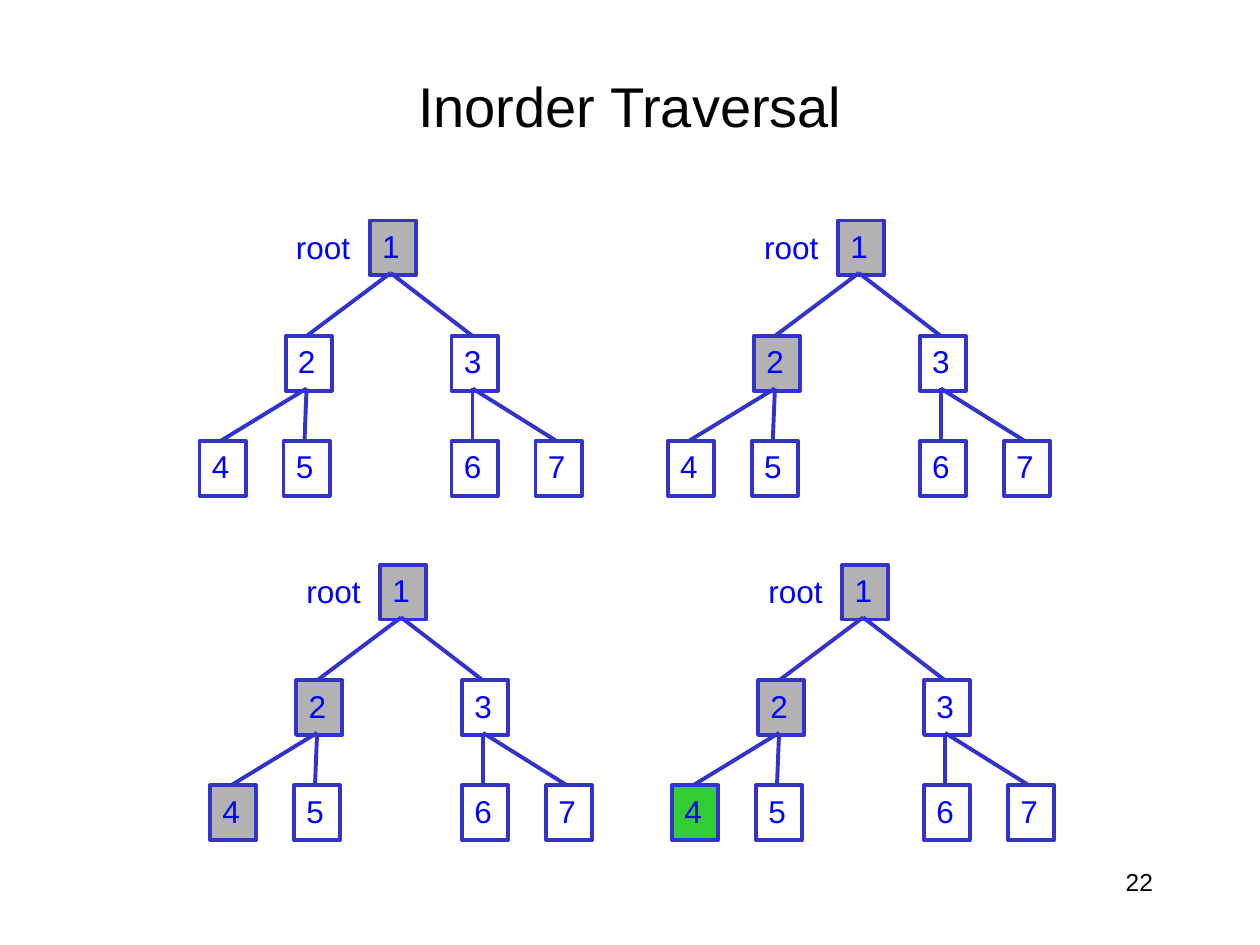
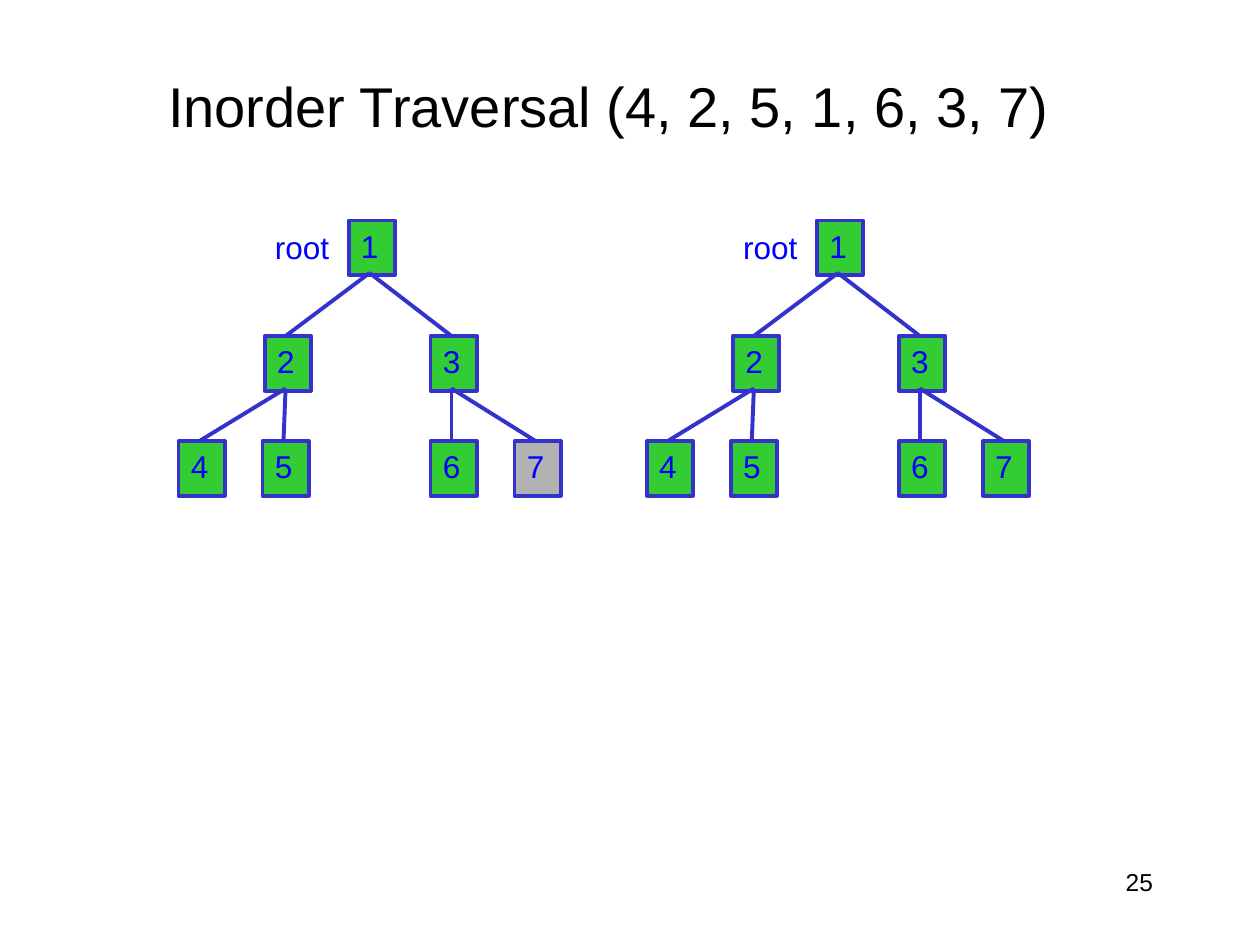
import pptx
import pptx.util
import pptx.dml.color
import pptx.enum.shapes
import pptx.enum.text
import pptx.oxml.ns
import lxml.etree

COLOURS = {"title": "000000", "text": "0000FF", "line": "3333CC",
           "entered": "B2B2B2", "visited": "33CC33"}
FONT = "Arial"
ALIGN = pptx.enum.text.PP_ALIGN
ANCHOR = pptx.enum.text.MSO_ANCHOR
AUTO = pptx.enum.text.MSO_AUTO_SIZE

prs = pptx.Presentation()
prs.slide_width, prs.slide_height = pptx.util.Inches(10), pptx.util.Inches(7.5)
UNIT = prs.slide_width / 120  # grid of 120 columns and 90 rows

# Node label: column and row within a tree
NODES = {"1": (16.2, 0), "2": (8.2, 11), "3": (24, 11),
         "4": (0, 21), "5": (8, 21), "7": (32, 21), "6": (24, 21)}
EDGES = ["12", "13", "24", "25", "36", "37"]
NODE_W, NODE_H = 4.4, 5.2
EDGE_X, EDGE_Y = 2, 5  # where an edge leaves its parent node

# Each tree: column, row, entered nodes, visited nodes
SLIDES = [
    ("Inorder Traversal", 9, "22", [
        (19, 21, "1", ""), (63.6, 21, "12", ""),
        (20, 53.8, "124", ""), (64, 53.8, "12", "4")]),
    ("Inorder Traversal (4, 2, 5, 1, 6, 3, 7)", 7, "25", [
        (17, 21, "7", "425163"), (61.6, 21, "", "4251637")]),
]


def grid(*lengths):
    """Turn columns or rows into slide lengths."""
    return [round(n * UNIT) for n in lengths]


def put_text(sp, text, size, colour, align=ALIGN.LEFT, anchor=ANCHOR.TOP, fit=False):
    """Write one paragraph; fit makes the shape hug unwrapped text."""
    tf = sp.text_frame
    tf.word_wrap = not fit
    tf.auto_size = AUTO.SHAPE_TO_FIT_TEXT if fit else AUTO.NONE
    tf.vertical_anchor = anchor
    p = tf.paragraphs[0]
    p.text, p.alignment = text, align
    p.font.name, p.font.size = FONT, pptx.util.Pt(size)
    p.font.color.rgb = pptx.dml.color.RGBColor.from_string(COLOURS[colour])


for title, title_col, number, trees in SLIDES:
    s = prs.slides.add_slide(prs.slide_layouts[6])
    put_text(s.shapes.add_textbox(*grid(86, 82, 25, 6)), number, 14, "title", ALIGN.RIGHT)
    put_text(s.shapes.add_textbox(*grid(title_col, 5, 102, 10)), title, 32, "title",
             ALIGN.CENTER, ANCHOR.MIDDLE)

    for left, top, entered, visited in trees:
        for label, (col, row) in NODES.items():
            sp = s.shapes.add_shape(pptx.enum.shapes.MSO_SHAPE.RECTANGLE,
                                    *grid(left + col, top + row, NODE_W, NODE_H))
            sp.shadow.inherit = False
            sp.line.color.rgb = pptx.dml.color.RGBColor.from_string(COLOURS["line"])
            sp.line.width = pptx.util.Pt(2.25)
            state = "visited" if label in visited else "entered" if label in entered else None
            if state:
                sp.fill.solid()
                sp.fill.fore_color.rgb = pptx.dml.color.RGBColor.from_string(COLOURS[state])
            else:
                sp.fill.background()
            put_text(sp, label, 18, "text", fit=True)

        for parent, child in EDGES:
            (col1, row1), (col2, row2) = NODES[parent], NODES[child]
            line = s.shapes.add_connector(
                pptx.enum.shapes.MSO_CONNECTOR.STRAIGHT,
                *grid(left + col1 + EDGE_X, top + row1 + EDGE_Y,
                      left + col2 + EDGE_X, top + row2))
            line.line.color.rgb = pptx.dml.color.RGBColor.from_string(COLOURS["line"])
            line.line.width = pptx.util.Pt(2.25)
            lxml.etree.SubElement(line._element.spPr, pptx.oxml.ns.qn("a:effectLst"))

        put_text(s.shapes.add_textbox(*grid(left + 8, top + 0.1, 7.6, 4.8)),
                 "root", 18, "text", fit=True)

prs.save("out.pptx")
